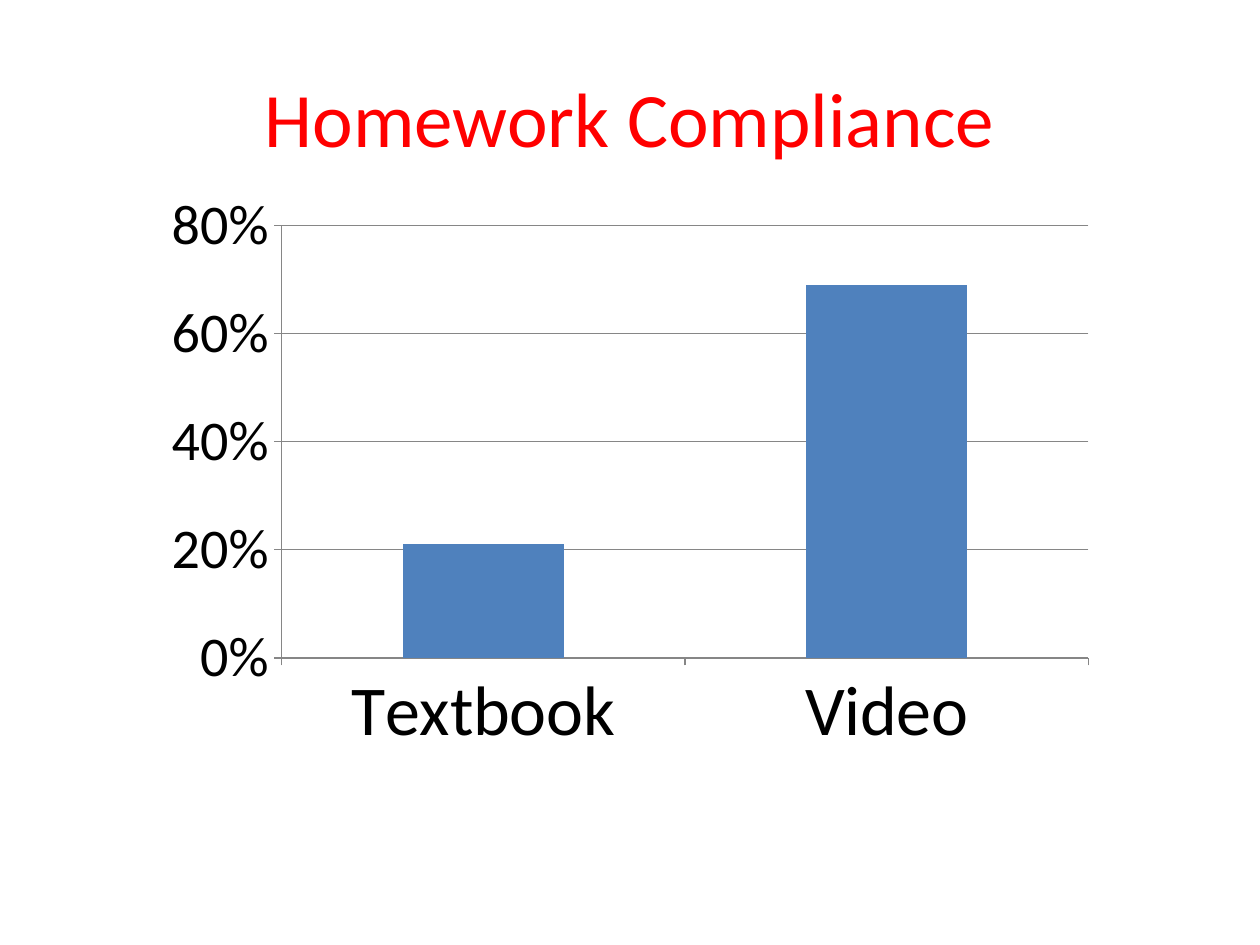
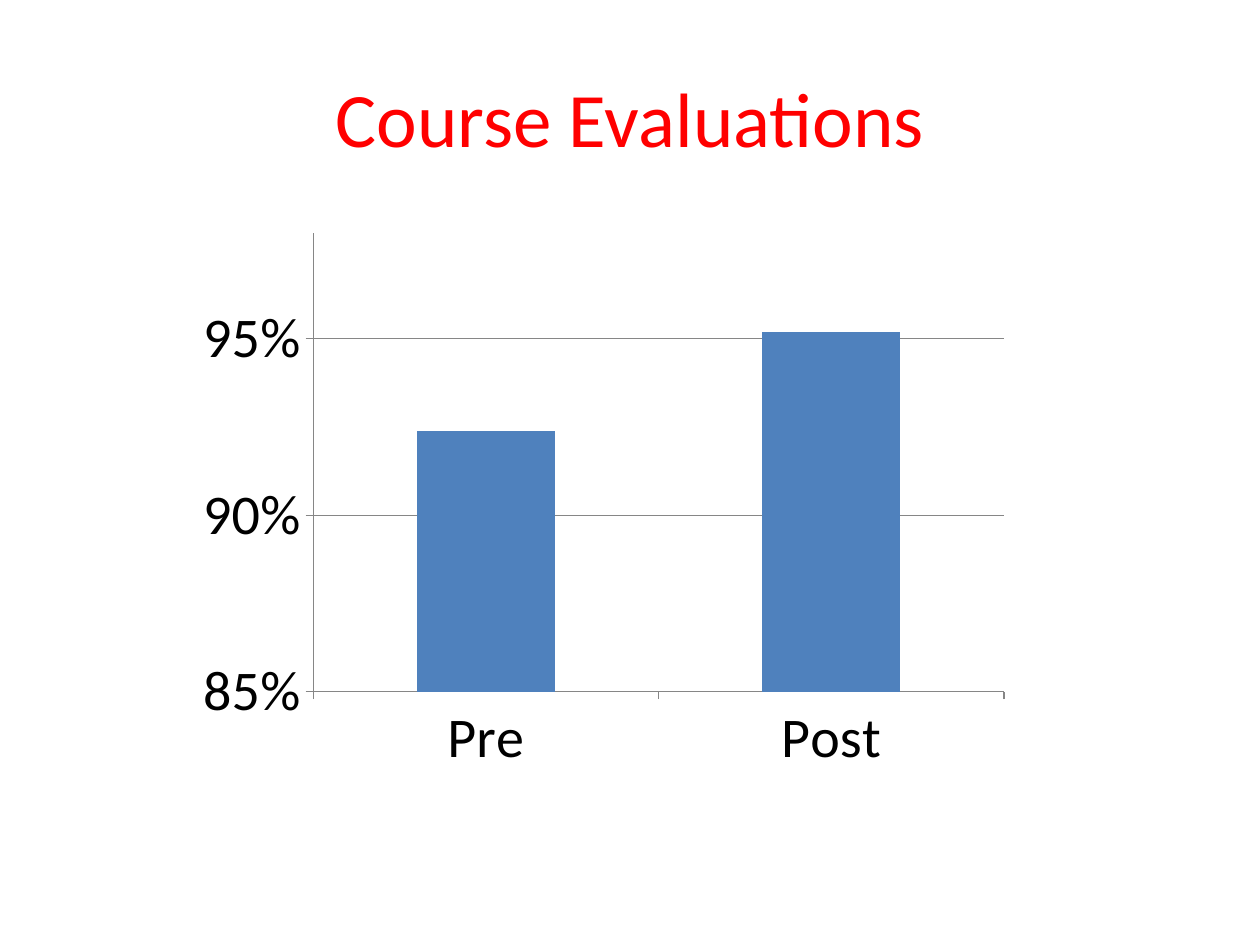
from dataclasses import dataclass

from pptx import Presentation
from pptx.chart.data import CategoryChartData
from pptx.dml.color import RGBColor
from pptx.enum.chart import XL_CHART_TYPE, XL_TICK_MARK
from pptx.enum.text import MSO_ANCHOR, PP_ALIGN
from pptx.util import Inches, Pt


@dataclass(frozen=True)
class Theme:
    font: str = "Calibri"
    title_color: RGBColor = RGBColor(0xFF, 0x00, 0x00)
    text_color: RGBColor = RGBColor(0x00, 0x00, 0x00)
    bar_color: RGBColor = RGBColor(0x4F, 0x81, 0xBD)
    line_color: RGBColor = RGBColor(0x86, 0x86, 0x86)
    title_size: Pt = Pt(44)
    large_label_size: Pt = Pt(40)
    label_size: Pt = Pt(32)
    line_width: Pt = Pt(0.75)


THEME = Theme()
TITLE_BOX = (0.5, 0.3, 9, 1.25)
TITLE_ONLY_LAYOUT = 5


def style_font(font, size, color):
    font.name = THEME.font
    font.size = size
    font.color.rgb = color


def style_line(line):
    line.color.rgb = THEME.line_color
    line.width = THEME.line_width


def place_title(slide, text, box):
    title = slide.shapes.title
    title.left, title.top, title.width, title.height = map(Inches, box)
    frame = title.text_frame
    frame.text = text
    frame.word_wrap = True
    frame.vertical_anchor = MSO_ANCHOR.MIDDLE
    paragraph = frame.paragraphs[0]
    paragraph.alignment = PP_ALIGN.CENTER
    style_font(paragraph.font, THEME.title_size, THEME.title_color)


def style_axis(axis, label_size):
    axis.major_tick_mark = XL_TICK_MARK.OUTSIDE
    axis.minor_tick_mark = XL_TICK_MARK.NONE
    style_line(axis.format.line)
    style_font(axis.tick_labels.font, label_size, THEME.text_color)


def place_bar_chart(slide, box, values, scale, category_size):
    """Draw percentages by category; scale is minimum, maximum and step."""
    data = CategoryChartData(number_format="0%")
    data.categories = list(values)
    data.add_series("Series 1", list(values.values()))
    chart = slide.shapes.add_chart(
        XL_CHART_TYPE.COLUMN_CLUSTERED, *map(Inches, box), data
    ).chart
    chart.has_title = False
    chart.has_legend = False
    style_font(chart.font, THEME.label_size, THEME.text_color)

    # Bars
    plot = chart.plots[0]
    plot.vary_by_categories = False
    plot.gap_width = 150
    fill = plot.series[0].format.fill
    fill.solid()
    fill.fore_color.rgb = THEME.bar_color

    # Axes and gridlines
    style_axis(chart.category_axis, category_size)
    value_axis = chart.value_axis
    style_axis(value_axis, THEME.label_size)
    value_axis.minimum_scale, value_axis.maximum_scale, value_axis.major_unit = scale
    value_axis.tick_labels.number_format = "0%"
    value_axis.tick_labels.number_format_is_linked = False
    value_axis.has_major_gridlines = True
    style_line(value_axis.major_gridlines.format.line)


def add_chart_slide(presentation, title, box, values, scale, category_size):
    layout = presentation.slide_layouts[TITLE_ONLY_LAYOUT]
    slide = presentation.slides.add_slide(layout)
    place_title(slide, title, TITLE_BOX)
    place_bar_chart(slide, box, values, scale, category_size)


def main():
    presentation = Presentation()
    presentation.slide_width = Inches(10)
    presentation.slide_height = Inches(7.5)

    add_chart_slide(
        presentation,
        "Homework Compliance",
        box=(1.21, 1.42, 7.58, 4.66),
        values={"Textbook": 0.21, "Video": 0.69},
        scale=(0, 0.8, 0.2),
        category_size=THEME.large_label_size,
    )
    add_chart_slide(
        presentation,
        "Course Evaluations",
        box=(1.48, 1.76, 6.62, 4.47),
        values={"Pre": 0.924, "Post": 0.952},
        scale=(0.85, 0.98, 0.05),
        category_size=THEME.label_size,
    )
    presentation.save("out.pptx")


if __name__ == "__main__":
    main()
